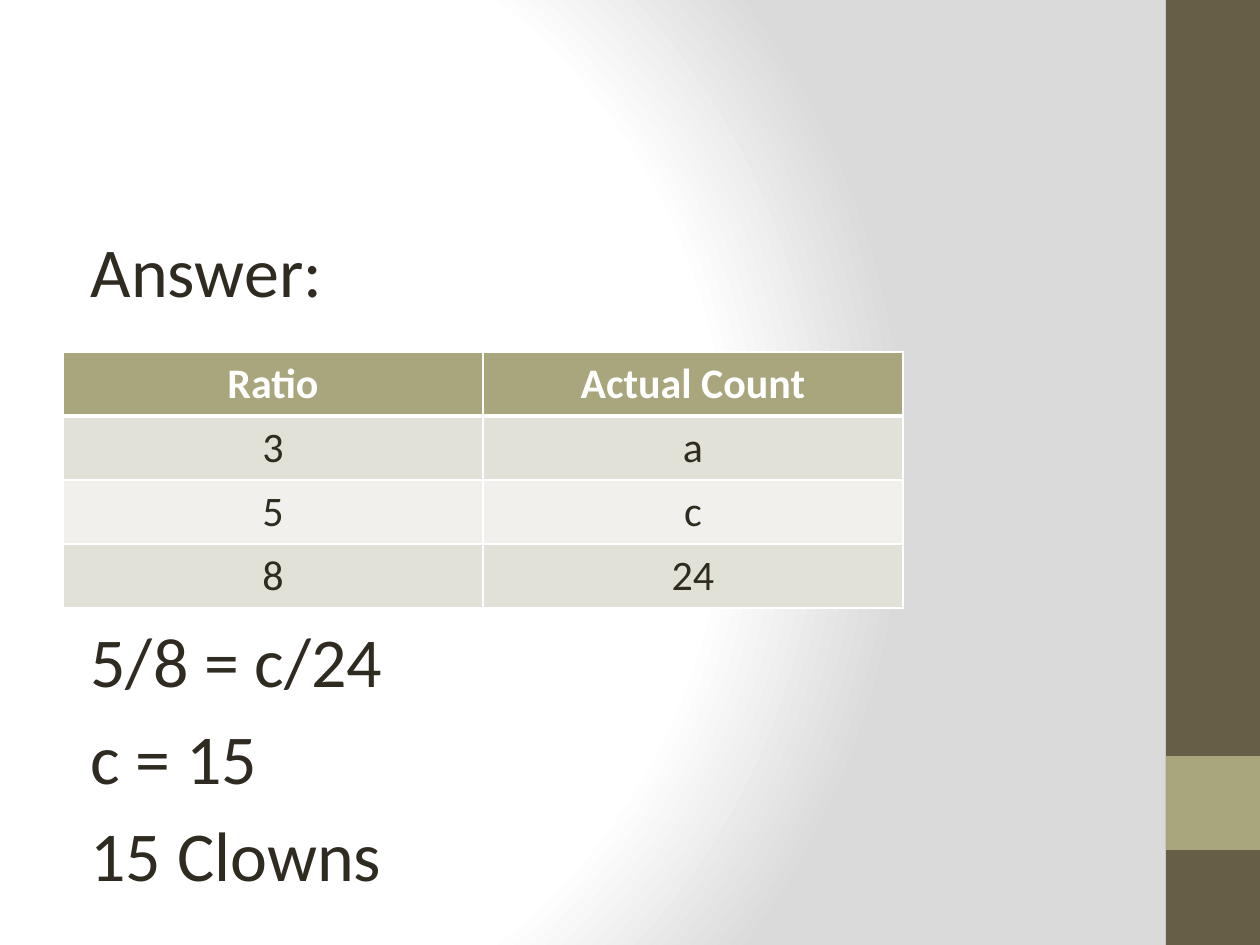
from dataclasses import dataclass

from lxml import etree
from pptx import Presentation
from pptx.dml.color import RGBColor
from pptx.enum.shapes import MSO_SHAPE
from pptx.enum.text import MSO_ANCHOR, MSO_AUTO_SIZE, PP_ALIGN
from pptx.oxml import parse_xml
from pptx.oxml.ns import nsdecls, qn
from pptx.util import Emu, Pt

WHITE = RGBColor(0xFF, 0xFF, 0xFF)
GRAY = RGBColor(0xDA, 0xDA, 0xDA)
INK = RGBColor(0x2F, 0x2B, 0x20)
BROWN = RGBColor(0x67, 0x5E, 0x47)
OLIVE = RGBColor(0xA9, 0xA5, 0x7C)
BAND_DARK = RGBColor(0xE2, 0xE1, 0xD7)
BAND_LIGHT = RGBColor(0xF1, 0xF0, 0xEC)

FONT = "Calibri"
PIXELS_PER_INCH = 126
WIDTH, HEIGHT = 1260, 945
ROW_HEIGHT, COLUMN_WIDTH = 64, 420


@dataclass(frozen=True)
class Bar:
    top: int
    height: int
    color: RGBColor


@dataclass(frozen=True)
class Line:
    text: str
    space_before: float = 7.2


BARS = [Bar(0, HEIGHT, BROWN), Bar(756, 94, OLIVE)]
# The second line leaves room for the table
LINES = [Line("Answer:"), Line("5/8 = c/24", 175.2), Line("c = 15"), Line("15 Clowns")]
ROWS = [("Ratio", "Actual Count"), ("3", "a"), ("5", "c"), ("8", "24")]


def px(value: int) -> Emu:
    return Emu(round(value * 914400 / PIXELS_PER_INCH))


def write(paragraph, text: str, *, size: int, color: RGBColor = INK,
          bold: bool = False, align=PP_ALIGN.LEFT, space_before: float = 0) -> None:
    paragraph.alignment = align
    paragraph.space_before = Pt(space_before)
    run = paragraph.add_run()
    run.text = text
    run.font.name = FONT
    run.font.size = Pt(size)
    run.font.bold = bold
    run.font.color.rgb = color


def paint_background(slide) -> None:
    fill = slide.background.fill
    fill.gradient()
    stops = "".join(
        f'<a:gs pos="{percent * 1000}"><a:srgbClr val="{color}"/></a:gs>'
        for percent, color in [(0, WHITE), (75, WHITE), (100, GRAY)])
    gradient = parse_xml(
        f'<a:gradFill {nsdecls("a")} rotWithShape="1"><a:gsLst>{stops}</a:gsLst>'
        '<a:path path="circle"><a:fillToRect l="20000" t="50000" r="100000" b="50000"/>'
        '</a:path></a:gradFill>')
    current = slide.background._cSld.find(".//" + qn("a:gradFill"))
    current.getparent().replace(current, gradient)


def draw_bar(slide, bar: Bar) -> None:
    left = 1166
    shape = slide.shapes.add_shape(
        MSO_SHAPE.RECTANGLE, px(left), px(bar.top), px(WIDTH - left), px(bar.height))
    shape.shadow.inherit = False
    shape.fill.solid()
    shape.fill.fore_color.rgb = bar.color
    shape.line.fill.background()


def fill_body(body, lines: list[Line]) -> None:
    body.left, body.top, body.width, body.height = px(63), px(221), px(1050), px(661)
    frame = body.text_frame
    frame.word_wrap = True
    frame.auto_size = MSO_AUTO_SIZE.NONE
    frame.vertical_anchor = MSO_ANCHOR.TOP
    for index, line in enumerate(lines):
        paragraph = frame.add_paragraph() if index else frame.paragraphs[0]
        write(paragraph, line.text, size=40, space_before=line.space_before)
        properties = paragraph._p.get_or_add_pPr()
        properties.set("marL", str(px(15)))
        properties.set("indent", "0")
        etree.SubElement(properties, qn("a:buNone"))


def border_cell(cell, **widths: int) -> None:
    properties = cell._tc.get_or_add_tcPr()
    for side, width in widths.items():
        properties.append(parse_xml(
            f'<a:ln{side} {nsdecls("a")} w="{Pt(width)}"><a:solidFill>'
            f'<a:srgbClr val="{WHITE}"/></a:solidFill></a:ln{side}>'))


def draw_table(slide, rows: list[tuple[str, str]]) -> None:
    columns = len(rows[0])
    table = slide.shapes.add_table(
        len(rows), columns, px(63), px(352),
        px(COLUMN_WIDTH * columns), px(ROW_HEIGHT * len(rows))).table
    for row_index, row in enumerate(rows):
        header = row_index == 0
        band = BAND_DARK if row_index % 2 else BAND_LIGHT
        for column_index, text in enumerate(row):
            cell = table.cell(row_index, column_index)
            border_cell(cell, L=1, R=1, T=3 if row_index == 1 else 1, B=3 if header else 1)
            cell.fill.solid()
            cell.fill.fore_color.rgb = OLIVE if header else band
            write(cell.text_frame.paragraphs[0], text, size=24, bold=header,
                  color=WHITE if header else INK, align=PP_ALIGN.CENTER)


def main() -> None:
    presentation = Presentation()
    presentation.slide_width, presentation.slide_height = px(WIDTH), px(HEIGHT)
    slide = presentation.slides.add_slide(presentation.slide_layouts[1])

    # The slide has no title
    title = slide.shapes.title._element
    title.getparent().remove(title)

    # Background and side bars
    paint_background(slide)
    for bar in BARS:
        draw_bar(slide, bar)

    # Answer text and ratio table
    fill_body(slide.placeholders[1], LINES)
    draw_table(slide, ROWS)

    presentation.save("out.pptx")


if __name__ == "__main__":
    main()
